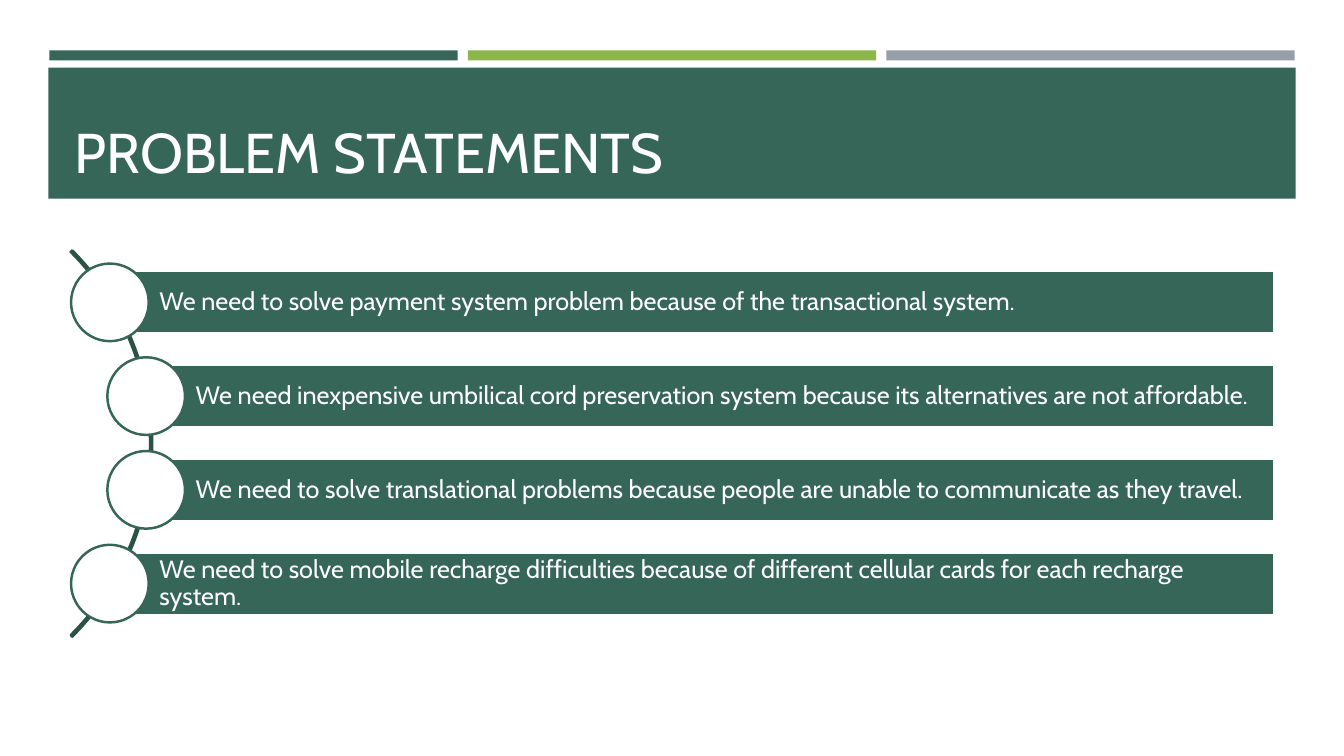
from dataclasses import dataclass

from pptx import Presentation
from pptx.dml.color import RGBColor
from pptx.enum.shapes import MSO_SHAPE as SHAPE
from pptx.enum.text import MSO_ANCHOR as ANCHOR, MSO_AUTO_SIZE as AUTO, PP_ALIGN as ALIGN
from pptx.util import Inches, Pt


@dataclass(frozen=True)
class Theme:
    """Colours, font and sizes of the slide."""
    green: str = "366658"
    dark: str = "2B5246"
    lime: str = "8CB64A"
    grey: str = "969FA7"
    white: str = "FFFFFF"
    font: str = "Cabin"
    title_size: int = 40
    body_size: int = 18
    line_width: float = 1.75


THEME = Theme()
STATEMENTS = [
    "We need to solve payment system problem because of the transactional system.",
    "We need inexpensive umbilical cord preservation system because its alternatives are not affordable.",
    "We need to solve translational problems because people are unable to communicate as they travel.",
    "We need to solve mobile recharge difficulties because of different cellular cards for each recharge system.",
]
BAR_LEFTS = [1.09, 1.45, 1.45, 1.09]
BAR_RIGHT, BAR_TOP, BAR_HEIGHT, BAR_PITCH = 12.64, 2.69, 0.62, 0.93
CIRCLE = 0.77


def add_box(s, kind, left, top, width, height, fill=None, line=None):
    """Add a preset shape without shadow."""
    sp = s.shapes.add_shape(kind, Inches(left), Inches(top), Inches(width), Inches(height))
    sp.shadow.inherit = False
    if fill:
        sp.fill.solid()
        sp.fill.fore_color.rgb = RGBColor.from_string(fill)
    else:
        sp.fill.background()
    if line:
        sp.line.color.rgb = RGBColor.from_string(line)
        sp.line.width = Pt(THEME.line_width)
    else:
        sp.line.fill.background()
    return sp


def set_text(sp, text, size, anchor, inset=0.1, spacing=1.0):
    """Write left-aligned white text into a shape."""
    tf = sp.text_frame
    tf.word_wrap = True
    tf.auto_size = AUTO.NONE
    tf.vertical_anchor = anchor
    tf.margin_left = Inches(inset)
    tf.margin_right = tf.margin_top = tf.margin_bottom = Inches(0.05)
    p = tf.paragraphs[0]
    p.alignment = ALIGN.LEFT
    p.line_spacing = spacing
    r = p.add_run()
    r.text = text
    r.font.name = THEME.font
    r.font.size = Pt(size)
    r.font.color.rgb = RGBColor.from_string(THEME.white)


def add_header(s, text):
    """Add the three strips, the banner and the title."""
    for i, color in enumerate([THEME.green, THEME.lime, THEME.grey]):
        add_box(s, SHAPE.RECTANGLE, 0.49 + 4.15 * i, 0.5, 4.05, 0.1, fill=color)
    add_box(s, SHAPE.RECTANGLE, 0.48, 0.67, 12.37, 1.3, fill=THEME.green)
    title = s.shapes.title
    title.left, title.top = Inches(0.64), Inches(0.77)
    title.width, title.height = Inches(12.06), Inches(1.11)
    set_text(title, text, THEME.title_size, ANCHOR.BOTTOM)
    title.element.getparent().append(title.element)


def add_arc(s):
    """Add the thin arc that links the circles."""
    arc = add_box(s, SHAPE.BLOCK_ARC, -3.91, 1.69, 5.42, 5.42, line=THEME.dark)
    for i, value in enumerate([189, 27, 0.004]):
        arc.adjustments[i] = value


def add_statement(s, text, left, top):
    """Add a bar with its statement and the circle on its left end."""
    bar = add_box(s, SHAPE.RECTANGLE, left, top, BAR_RIGHT - left, BAR_HEIGHT,
                  fill=THEME.green, line=THEME.white)
    set_text(bar, text, THEME.body_size, ANCHOR.MIDDLE, inset=0.49, spacing=0.9)
    add_box(s, SHAPE.OVAL, left - CIRCLE / 2, top + (BAR_HEIGHT - CIRCLE) / 2, CIRCLE, CIRCLE,
            fill=THEME.white, line=THEME.green)


def main():
    """Build the slide and save it."""
    prs = Presentation()
    prs.slide_width, prs.slide_height = Inches(13.33), Inches(7.5)
    s = prs.slides.add_slide(prs.slide_layouts[5])
    add_header(s, "PROBLEM STATEMENTS")
    add_arc(s)
    for i, (text, left) in enumerate(zip(STATEMENTS, BAR_LEFTS)):
        add_statement(s, text, left, BAR_TOP + BAR_PITCH * i)
    prs.save("out.pptx")


if __name__ == "__main__":
    main()
